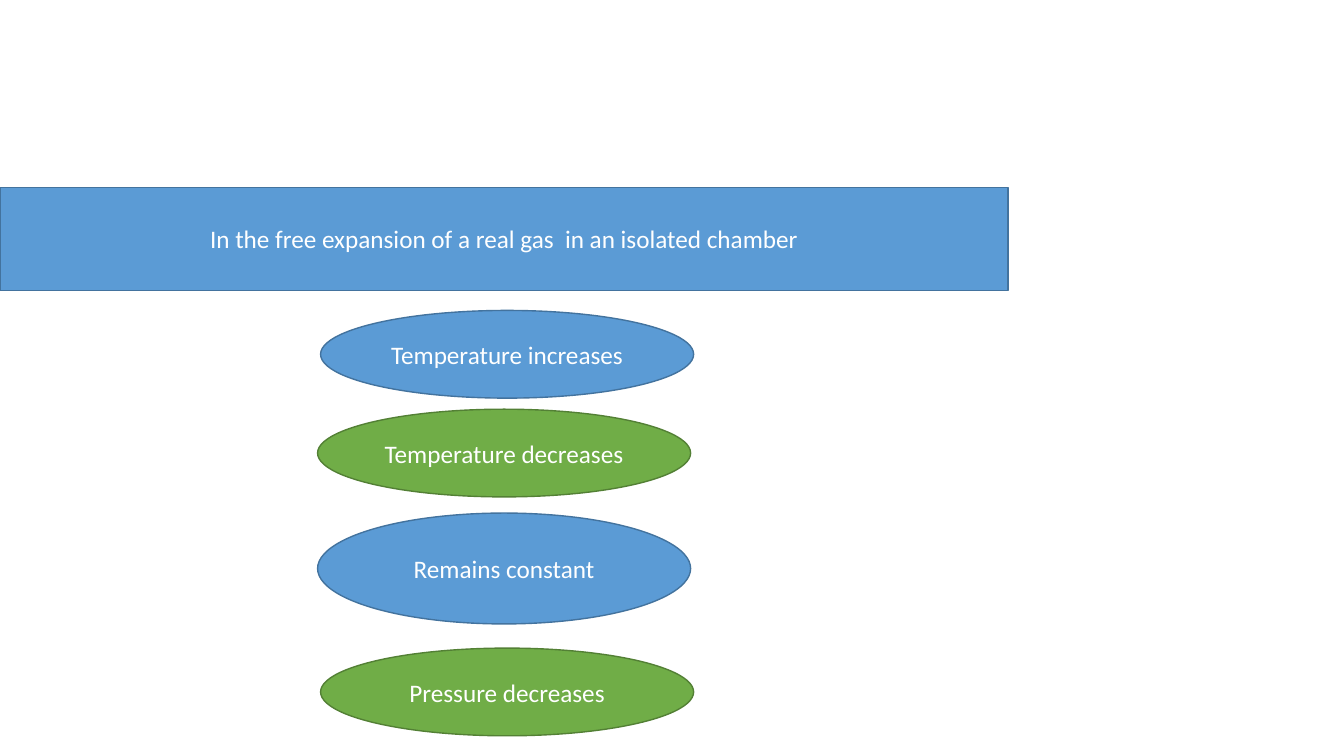
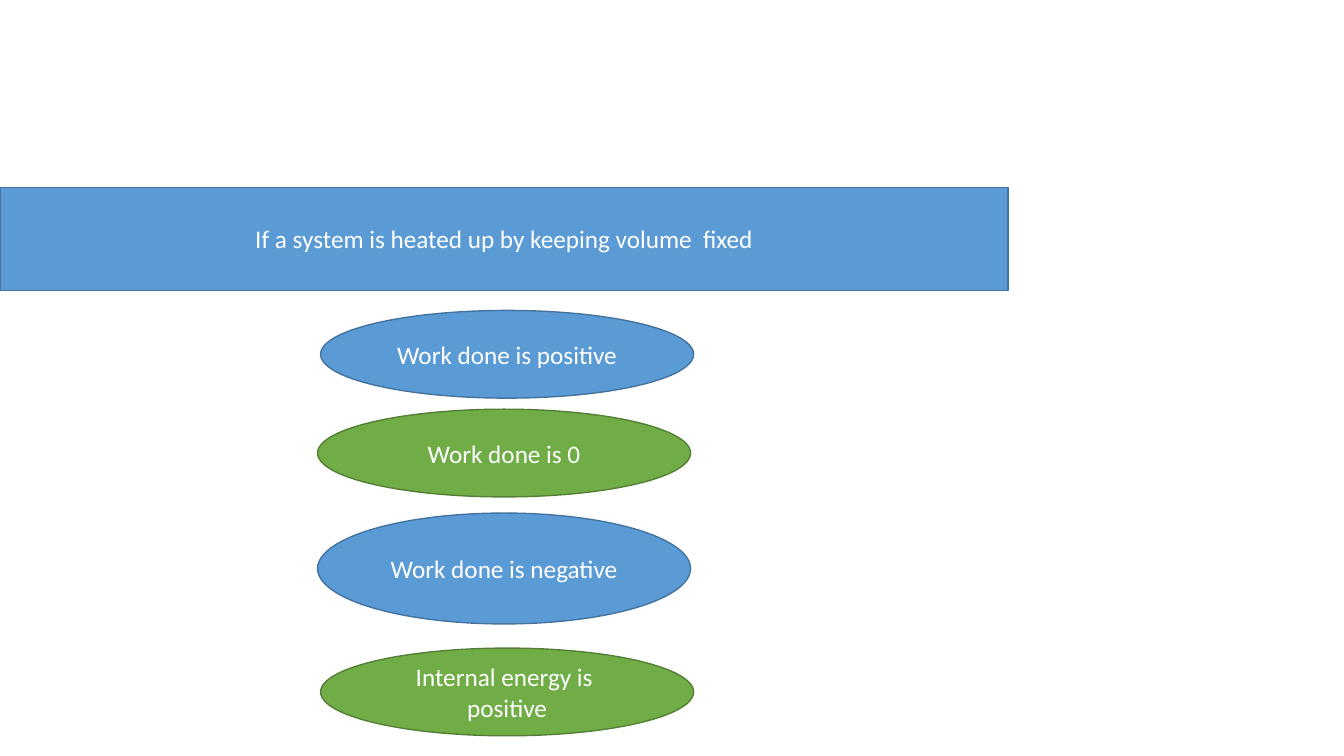
from dataclasses import dataclass

from pptx import Presentation
from pptx.dml.color import RGBColor
from pptx.enum.shapes import MSO_SHAPE as Shape
from pptx.enum.text import MSO_ANCHOR as Anchor, PP_ALIGN as Align
from pptx.util import Emu, Pt

EMU_PER_PX = 9144
BLANK_LAYOUT = 6


@dataclass(frozen=True)
class Theme:
    """Colours as fill and outline pairs, and type settings."""
    blue: tuple = ("5B9BD5", "43739E")
    green: tuple = ("70AD47", "538035")
    text: str = "FFFFFF"
    font: str = "Calibri"
    text_size: int = 18
    outline: int = 1


THEME = Theme()
PAGE_SIZE = (1333, 750)
QUESTION_BAR = (0, 186, 1000, 102)
ANSWER_OVALS = (
    ((318, 308, 370, 87), THEME.blue),
    ((315, 406, 370, 87), THEME.green),
    ((315, 509, 370, 110), THEME.blue),
    ((318, 643, 370, 87), THEME.green),
)
QUESTIONS = (
    ("In the free expansion of a real gas  in an isolated chamber",
     ("Temperature increases", "Temperature decreases",
      "Remains constant", "Pressure decreases")),
    ("If a system is heated up by keeping volume  fixed",
     ("Work done is positive", "Work done is 0",
      "Work done is negative", "Internal energy is  positive")),
)


def px(length):
    """Turn a length in px into EMU."""
    return Emu(length * EMU_PER_PX)


def add_label(page, kind, bounds, colours, text):
    """Draw a filled, outlined shape with centred text."""
    box = page.shapes.add_shape(kind, *map(px, bounds))
    box.shadow.inherit = False
    fill, outline = map(RGBColor.from_string, colours)
    box.fill.solid()
    box.fill.fore_color.rgb = fill
    box.line.color.rgb = outline
    box.line.width = Pt(THEME.outline)
    frame = box.text_frame
    frame.word_wrap = True
    frame.vertical_anchor = Anchor.MIDDLE
    para = frame.paragraphs[0]
    para.text = text
    para.alignment = Align.CENTER
    para.font.name = THEME.font
    para.font.size = Pt(THEME.text_size)
    para.font.color.rgb = RGBColor.from_string(THEME.text)


def add_question(deck, question, answers):
    """Add a page with a question bar above its answer ovals."""
    page = deck.slides.add_slide(deck.slide_layouts[BLANK_LAYOUT])
    add_label(page, Shape.RECTANGLE, QUESTION_BAR, THEME.blue, question)
    for (bounds, colours), answer in zip(ANSWER_OVALS, answers):
        add_label(page, Shape.OVAL, bounds, colours, answer)


def main():
    """Build and save the quiz deck."""
    deck = Presentation()
    deck.slide_width, deck.slide_height = map(px, PAGE_SIZE)
    for question, answers in QUESTIONS:
        add_question(deck, question, answers)
    deck.save("out.pptx")


if __name__ == "__main__":
    main()
